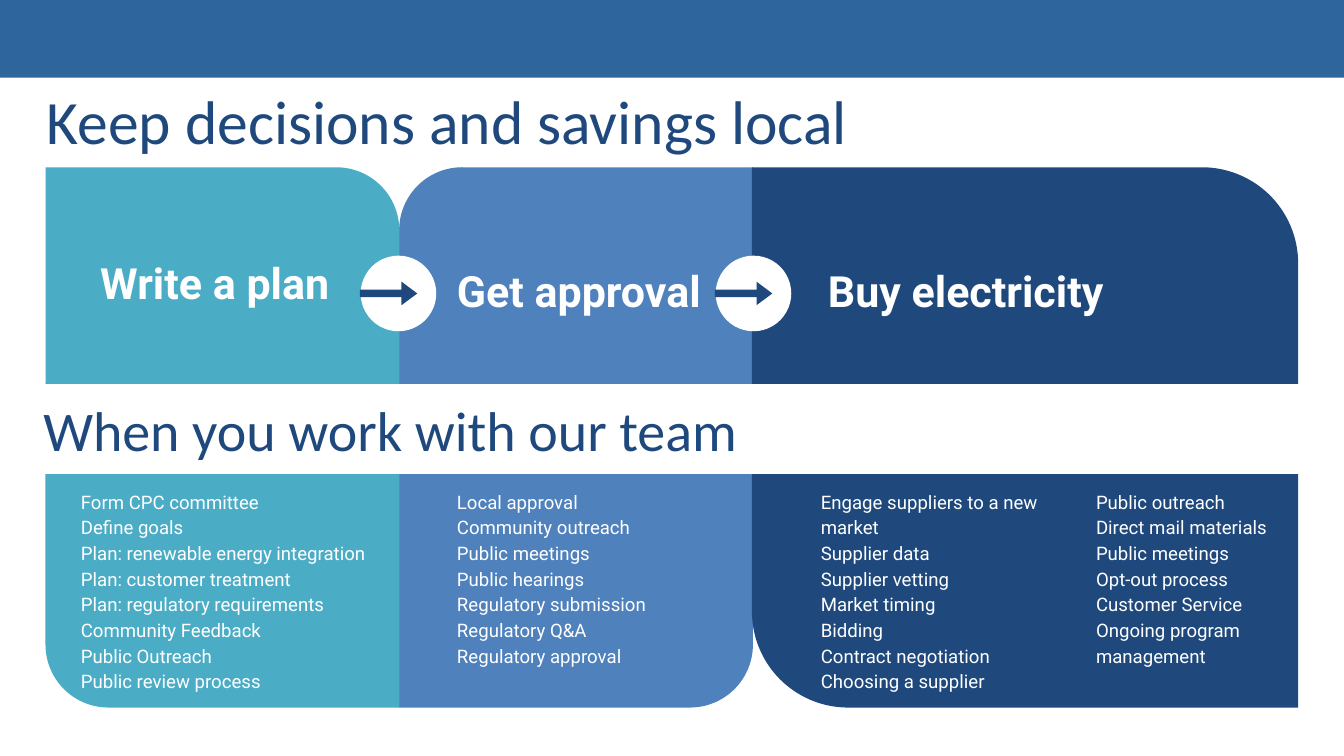
from pptx import Presentation
from pptx import util as u
from pptx.dml import color
from pptx.enum import shapes, text

NAVY, BLUE, TEAL, WHITE = "1F497D", "4F81BD", "4BACC6", "FFFFFF"
KIND = shapes.MSO_SHAPE


def rgb(code):
    return color.RGBColor.from_string(code)


class Deck:
    head, body = "Calibri", "Roboto"

    def __init__(self, wide, high):
        self.prs = Presentation()
        self.prs.slide_width, self.prs.slide_height = u.Pt(wide), u.Pt(high)
        self.slide = self.prs.slides.add_slide(self.prs.slide_layouts[6])

    def shape(self, kind, box, fill, adj=()):
        item = self.slide.shapes.add_shape(kind, *map(u.Pt, box))
        item.shadow.inherit = False
        item.fill.solid()
        item.fill.fore_color.rgb = rgb(fill)
        item.line.fill.background()
        for i, val in enumerate(adj):
            item.adjustments[i] = val
        return item

    def text(self, box, lines, size, font, ink, bold=False, gap=1.0, pad=9.6, mid=False):
        item = self.slide.shapes.add_textbox(*map(u.Pt, box))
        frame = item.text_frame
        frame.word_wrap = True
        frame.vertical_anchor = text.MSO_ANCHOR.MIDDLE if mid else text.MSO_ANCHOR.TOP
        frame.margin_left = frame.margin_right = u.Pt(pad)
        frame.margin_top = frame.margin_bottom = u.Pt(pad)
        for i, line in enumerate(lines):
            para = frame.add_paragraph() if i else frame.paragraphs[0]
            para.line_spacing = gap
            run = para.add_run()
            run.text = line
            run.font.size, run.font.name, run.font.bold = u.Pt(size), font, bold
            run.font.color.rgb = rgb(ink)
        return item

    def title(self, box, line, size, pad):
        self.text(box, [line], size, self.head, NAVY, pad=pad, mid=True)

    def step(self, box, line):
        self.text(box, [line], 30.7, self.body, WHITE, bold=True)

    def tasks(self, left, wide, lines):
        self.text((left, 338.4, wide, 160), lines, 13.3, self.body, WHITE, gap=1.15)

    def arrow(self, left):
        self.shape(KIND.OVAL, (left, 182.6, 54, 54), WHITE)
        self.shape(KIND.RIGHT_ARROW, (left - 0.5, 201.2, 41, 16.8), NAVY, (0.32, 0.67))


def main():
    deck = Deck(960, 540)

    # Top band and title
    deck.shape(KIND.RECTANGLE, (-1.4, -0.7, 966.2, 56.2), "2D659C")
    deck.title((23.8, 62.6, 895.7, 45.4), "Keep decisions and savings local", 44, 9.6)

    # Three panels, rounded on opposite corners
    for left, wide, fill, adj in (
        (285.1, 252.7, BLUE, (0.178, 0)),
        (32.5, 252.7, TEAL, (0, 0.178)),
        (537.1, 390.2, NAVY, (0, 0.178)),
    ):
        deck.shape(KIND.ROUND_2_DIAG_RECTANGLE, (left, 119.5, wide, 385.9), fill, adj)

    # Step names
    deck.step((61.9, 173.5, 188.6, 77.8), "Write a plan")
    deck.step((316.8, 179.3, 205.9, 113), "Get approval")
    deck.step((581.8, 179.3, 313.9, 113), "Buy electricity")

    # Arrows between steps
    for left in (257.6, 511.2):
        deck.arrow(left)

    # Task lists
    deck.tasks(48.2, 226.1, [
        "Form CPC committee", "Define goals",
        "Plan: renewable energy integration", "Plan: customer treatment",
        "Plan: regulatory requirements", "Community Feedback",
        "Public Outreach", "Public review process"])
    deck.tasks(316.8, 188.6, [
        "Local approval", "Community outreach", "Public meetings",
        "Public hearings", "Regulatory submission", "Regulatory Q&A",
        "Regulatory approval"])
    deck.tasks(576.7, 196.6, [
        "Engage suppliers to a new market", "Supplier data",
        "Supplier vetting", "Market timing", "Bidding",
        "Contract negotiation", "Choosing a supplier"])
    deck.tasks(773.3, 146.9, [
        "Public outreach", "Direct mail materials", "Public meetings",
        "Opt-out process", "Customer Service", "Ongoing program management"])

    # White band with the second heading
    band = (23.8, 275, 913, 63.4)
    edge = deck.shape(KIND.RECTANGLE, band, WHITE).line
    edge.color.rgb, edge.width = rgb(WHITE), u.Pt(0.75)
    deck.title(band, "When you work with our team", 40, 7.2)

    deck.prs.save("out.pptx")


if __name__ == "__main__":
    main()
